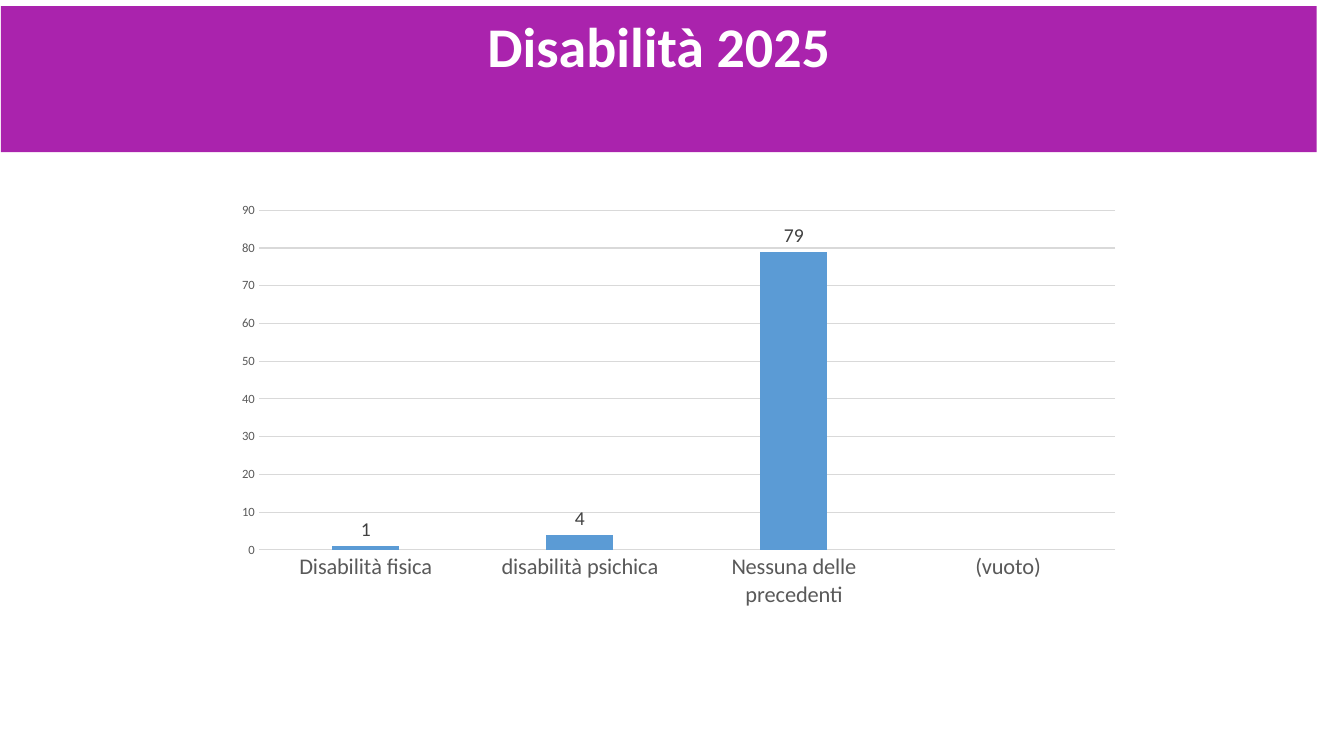
from pptx import Presentation
from pptx.chart.data import CategoryChartData
from pptx.dml.color import RGBColor
from pptx.enum.chart import XL_CHART_TYPE, XL_LABEL_POSITION, XL_TICK_MARK
from pptx.enum.text import MSO_ANCHOR, MSO_AUTO_SIZE, PP_ALIGN
from pptx.util import Inches, Pt

PURPLE = RGBColor(0xAA, 0x23, 0xAD)
WHITE = RGBColor(0xFF, 0xFF, 0xFF)
BLUE = RGBColor(0x5B, 0x9B, 0xD5)
BLACK = RGBColor(0, 0, 0)
DARK = RGBColor(0x40, 0x40, 0x40)
GRAY = RGBColor(0x59, 0x59, 0x59)
LIGHT = RGBColor(0xD9, 0xD9, 0xD9)
FONT = "Calibri"

COUNTS = {
    "Disabilità fisica": 1,
    "disabilità psichica": 4,
    "Nessuna delle precedenti": 79,
    "(vuoto)": None,
}


def set_font(font, size, color, bold=False):
    font.name = FONT
    font.size = Pt(size)
    font.color.rgb = color
    font.bold = bold


def set_line(line, color=LIGHT, width=0.75):
    line.color.rgb = color
    line.width = Pt(width)


def write(frame, text, size=16, color=BLACK, bold=False, align=PP_ALIGN.LEFT):
    frame.text = text
    for par in frame.paragraphs:
        par.alignment = align
        for run in par.runs:
            set_font(run.font, size, color, bold)


def add_banner(slide, text, left, top, width, height):
    title = slide.shapes.title
    title.left, title.top = Inches(left), Inches(top)
    title.width, title.height = Inches(width), Inches(height)
    title.fill.solid()
    title.fill.fore_color.rgb = PURPLE
    frame = title.text_frame
    frame.word_wrap = True
    frame.auto_size = MSO_AUTO_SIZE.NONE
    frame.vertical_anchor = MSO_ANCHOR.TOP
    write(frame, text, size=40, color=WHITE, bold=True, align=PP_ALIGN.CENTER)


def style_axes(chart):
    cat, val = chart.category_axis, chart.value_axis
    for axis, size in ((cat, 16), (val, 9)):
        axis.major_tick_mark = axis.minor_tick_mark = XL_TICK_MARK.NONE
        set_font(axis.tick_labels.font, size, GRAY)
    set_line(cat.format.line)
    val.format.line.fill.background()
    val.minimum_scale, val.maximum_scale, val.major_unit = 0, 90, 10
    val.has_major_gridlines = True
    set_line(val.major_gridlines.format.line)


def add_bars(slide, counts, left, top, width, height):
    data = CategoryChartData()
    data.categories = counts.keys()
    data.add_series("Disabilità", counts.values())
    chart = slide.shapes.add_chart(
        XL_CHART_TYPE.COLUMN_CLUSTERED,
        Inches(left), Inches(top), Inches(width), Inches(height), data,
    ).chart
    chart.has_legend = False
    chart.has_title = False
    set_font(chart.font, 10, BLACK)
    style_axes(chart)

    plot = chart.plots[0]
    plot.gap_width = 219
    plot.overlap = -27
    plot.vary_by_categories = False
    bars = plot.series[0]
    bars.format.fill.solid()
    bars.format.fill.fore_color.rgb = BLUE
    labels = bars.data_labels
    labels.show_value = True
    labels.position = XL_LABEL_POSITION.OUTSIDE_END
    set_font(labels.font, 14, DARK)


def main():
    deck = Presentation()
    deck.slide_width, deck.slide_height = Inches(13.33), Inches(7.5)
    slide = deck.slides.add_slide(deck.slide_layouts.get_by_name("Title Only"))
    add_banner(slide, "Disabilità 2025", 0.01, 0.06, 13.05, 1.45)
    add_bars(slide, COUNTS, 2.22, 1.93, 9.02, 4.19)
    deck.save("out.pptx")


if __name__ == "__main__":
    main()
